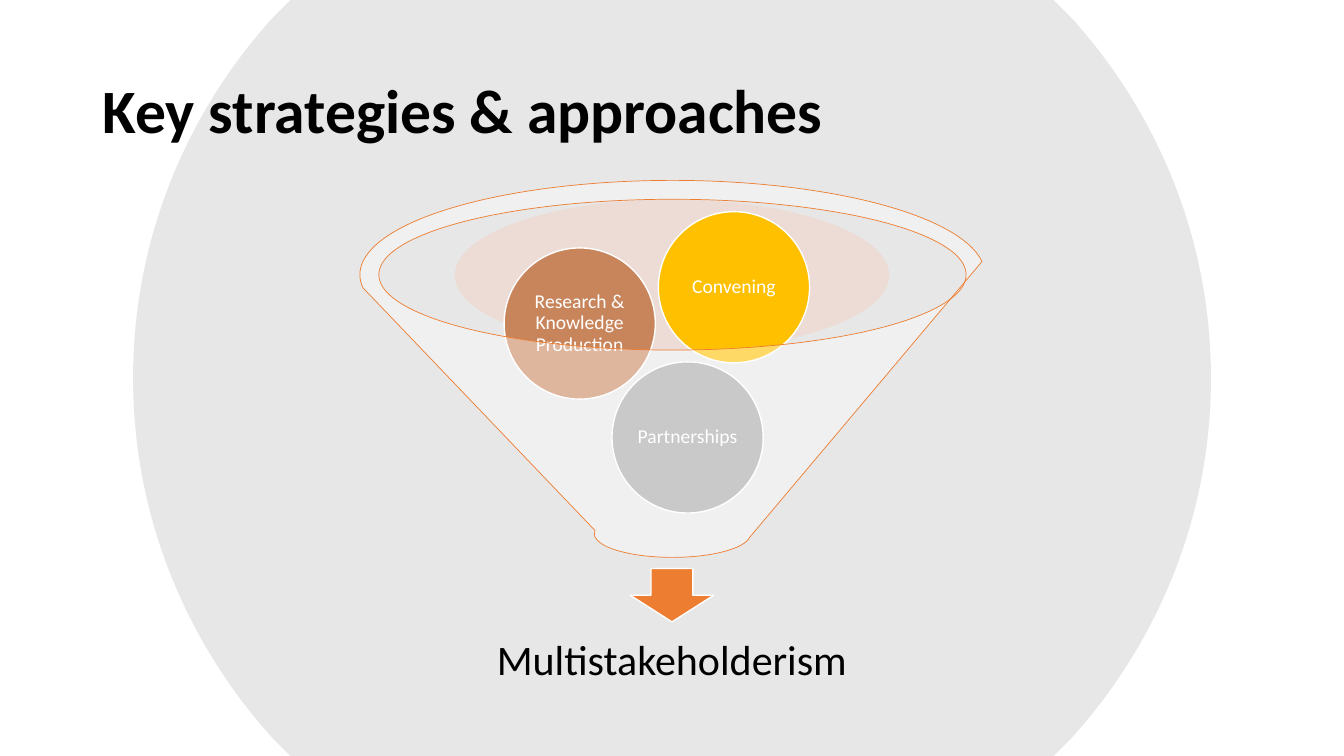
import lxml.etree
import pptx
import pptx.dml.color
import pptx.enum.shapes
import pptx.enum.text
import pptx.oxml.ns
import pptx.util

Inches = pptx.util.Inches
Pt = pptx.util.Pt
SHAPE = pptx.enum.shapes.MSO_SHAPE
ALIGN = pptx.enum.text.PP_ALIGN
qn = pptx.oxml.ns.qn

THEME = {
    "font": "Calibri",
    "title_size": 44, "outcome_size": 30, "ball_size": 14,
    "black": "000000", "white": "FFFFFF",
    "backdrop": "D9D9D9", "mouth": "F6CCBE", "accent": "ED7D31",
    "research": "C8855C", "convening": "FFC000", "partnerships": "A5A5A5",
}


def paint(shape, fill, opacity=100, line=None, line_width=1):
    """Set the fill, its opacity in percent, and the outline of a shape."""
    shape.shadow.inherit = False
    shape.fill.solid()
    shape.fill.fore_color.rgb = pptx.dml.color.RGBColor.from_string(THEME[fill])
    if opacity < 100:
        color = shape.element.spPr.find(".//" + qn("a:srgbClr"))
        alpha = lxml.etree.SubElement(color, qn("a:alpha"))
        alpha.set("val", str(opacity * 1000))
    if line:
        shape.line.color.rgb = pptx.dml.color.RGBColor.from_string(THEME[line])
        shape.line.width = Pt(line_width)
    else:
        shape.line.fill.background()


def write(shape, text, size, color, bold=False, align=ALIGN.CENTER, inset=0.02):
    """Write one vertically centred paragraph into a shape."""
    frame = shape.text_frame
    frame.word_wrap = True
    frame.vertical_anchor = pptx.enum.text.MSO_ANCHOR.MIDDLE
    frame.margin_left = frame.margin_right = Inches(inset)
    frame.margin_top = frame.margin_bottom = Inches(inset)
    paragraph = frame.paragraphs[0]
    paragraph.alignment = align
    paragraph.line_spacing = 0.9
    run = paragraph.add_run()
    run.text = text
    run.font.name = THEME["font"]
    run.font.size = Pt(THEME[size])
    run.font.bold = bold
    run.font.color.rgb = pptx.dml.color.RGBColor.from_string(THEME[color])


deck = pptx.Presentation()
deck.slide_width, deck.slide_height = Inches(13.33), Inches(7.5)
slide = deck.slides.add_slide(deck.slide_layouts[6])
shapes = slide.shapes

# Backdrop: a circle cut off by the slide's top and bottom edges
right_side = [(10.45, 0), (10.62, 0.17), (11.48, 1.12), (12.01, 2.37), (12.01, 3.75),
              (12.01, 5.13), (11.48, 6.38), (10.62, 7.33), (10.45, 7.5)]
left_side = [(13.33 - x, 7.5 - y) for x, y in right_side]
outline = [(Inches(x), Inches(y)) for x, y in right_side + left_side]
builder = shapes.build_freeform(*outline[0])
builder.add_line_segments(outline[1:], close=True)
backdrop = builder.convert_to_shape()

# Round each side: two curves of three points, from its third point on
segments = backdrop.element.spPr.findall(".//" + qn("a:lnTo"))
for side_start in (0, len(right_side)):
    for first in (side_start + 1, side_start + 4):
        curve = lxml.etree.Element(qn("a:cubicBezTo"))
        segments[first].addprevious(curve)
        for segment in segments[first:first + 3]:
            curve.append(segment[0])
            segment.getparent().remove(segment)
paint(backdrop, "backdrop", opacity=62)

# Title
title = shapes.add_textbox(Inches(0.92), Inches(0.4), Inches(11.5), Inches(1.45))
write(title, "Key strategies & approaches", "title_size", "black",
      bold=True, align=ALIGN.LEFT, inset=0.1)

# Funnel mouth
mouth = shapes.add_shape(SHAPE.OVAL, Inches(4.51), Inches(1.98), Inches(4.31), Inches(1.5))
paint(mouth, "mouth", opacity=40)

# Arrow and the outcome below it
arrow = shapes.add_shape(SHAPE.DOWN_ARROW, Inches(6.25), Inches(5.64), Inches(0.83), Inches(0.53))
paint(arrow, "accent", line="white")
outcome = shapes.add_textbox(Inches(4.66), Inches(6.07), Inches(4.01), Inches(1))
write(outcome, "Multistakeholderism", "outcome_size", "black", inset=0.23)

# Strategies inside the funnel
for strategy, color, left, top in [
    ("Partnerships", "partnerships", 6.07, 3.59),
    ("Research & Knowledge Production", "research", 5, 2.46),
    ("Convening", "convening", 6.53, 2.1),
]:
    ball = shapes.add_shape(SHAPE.OVAL, Inches(left), Inches(top), Inches(1.5), Inches(1.5))
    paint(ball, color, line="white")
    write(ball, strategy, "ball_size", "white")

# Translucent funnel over the strategies
funnel = shapes.add_shape(SHAPE.FUNNEL, Inches(3.57), Inches(1.79), Inches(6.2), Inches(3.74))
paint(funnel, "white", opacity=40, line="accent", line_width=0.5)

deck.save("out.pptx")
